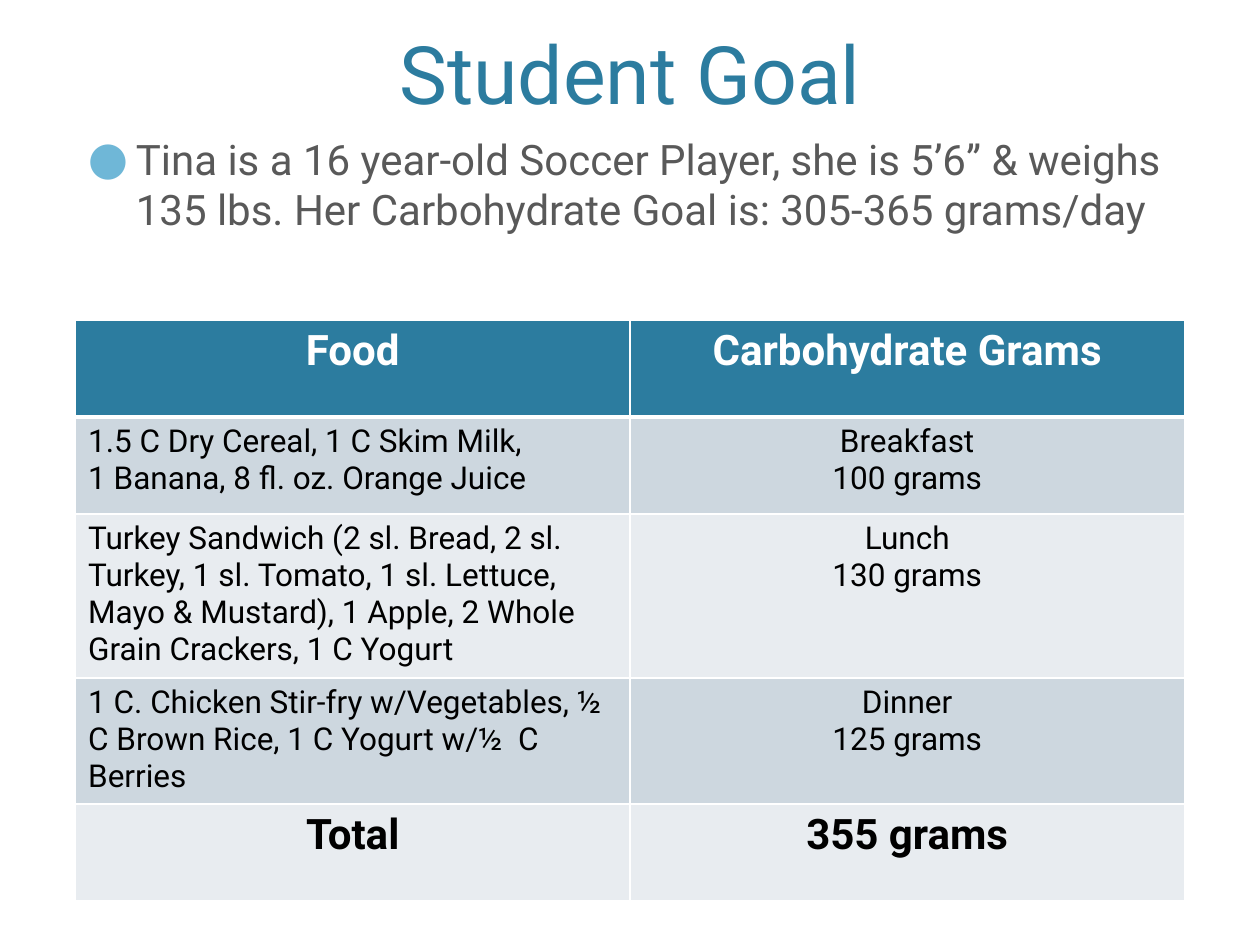
from dataclasses import dataclass

from lxml.etree import SubElement
from pptx import Presentation
from pptx.dml.color import RGBColor
from pptx.enum.text import MSO_ANCHOR, MSO_AUTO_SIZE, PP_ALIGN
from pptx.oxml import parse_xml
from pptx.oxml.ns import nsdecls, qn
from pptx.util import Inches, Pt

SLIDE_W, SLIDE_H = Inches(10), Inches(7.5)
MARGIN = round(SLIDE_W * 0.06)
CONTENT_W = SLIDE_W - 2 * MARGIN
TITLE_TOP, TITLE_H = Inches(0.12), Inches(0.89)
BODY_TOP, BODY_H = TITLE_TOP + TITLE_H, Inches(5.49)
TABLE_TOP, ROW_H = Inches(2.54), Inches(0.77)
FONT = "Roboto"
COLORS = {
    "accent": "2C7C9F",
    "bullet": "6FB7D7",
    "body": "595959",
    "white": "FFFFFF",
    "black": "000000",
    "band_dark": "CDD7DF",
    "band_light": "E8ECF0",
}


@dataclass(frozen=True)
class MealRow:
    food: str
    grams: str
    fill: str
    color: str = "black"
    emphasized: bool = False


MEAL_ROWS = [
    MealRow("Food", "Carbohydrate Grams", "accent", "white", True),
    MealRow("1.5 C Dry Cereal, 1 C Skim Milk,\n1 Banana, 8 fl. oz. Orange Juice",
            "Breakfast\n100 grams", "band_dark"),
    MealRow("Turkey Sandwich (2 sl. Bread, 2 sl. Turkey, 1 sl. Tomato, 1 sl. Lettuce, "
            "Mayo & Mustard), 1 Apple, 2 Whole Grain Crackers, 1 C Yogurt",
            "Lunch\n130 grams", "band_light"),
    MealRow("1 C. Chicken Stir-fry w/Vegetables, ½ C Brown Rice, 1 C Yogurt w/½  C Berries",
            "Dinner\n125 grams", "band_dark"),
    MealRow("Total", "355 grams", "band_light", emphasized=True),
]


def write_text(frame, text: str, *, size: float, color: str,
               bold: bool = False, align=PP_ALIGN.LEFT) -> None:
    frame.text = text
    frame.word_wrap = True
    for paragraph in frame.paragraphs:
        paragraph.alignment = align
        for run in paragraph.runs:
            run.font.name = FONT
            run.font.size = Pt(size)
            run.font.bold = bold
            run.font.color.rgb = RGBColor.from_string(COLORS[color])


def add_bullet(paragraph) -> None:
    properties = paragraph._p.get_or_add_pPr()
    properties.set("marL", str(Inches(0.38)))
    properties.set("indent", str(-Inches(0.38)))
    bullet_color = SubElement(properties, qn("a:buClr"))
    SubElement(bullet_color, qn("a:srgbClr"), val=COLORS["bullet"])
    SubElement(properties, qn("a:buSzPct"), val="110000")
    SubElement(properties, qn("a:buFont"), typeface=FONT)
    SubElement(properties, qn("a:buChar"), char="●")


def set_borders(cell, top: float, bottom: float) -> None:
    """Draw white cell borders; top and bottom are widths in points."""
    widths = {"lnL": 1, "lnR": 1, "lnT": top, "lnB": bottom}
    properties = cell._tc.get_or_add_tcPr()
    for position, (side, width) in enumerate(widths.items()):
        properties.insert(position, parse_xml(
            f'<a:{side} {nsdecls("a")} w="{Pt(width)}"><a:solidFill>'
            f'<a:srgbClr val="{COLORS["white"]}"/></a:solidFill></a:{side}>'))


def add_title(slide) -> None:
    title = slide.shapes.title
    title.left, title.top = MARGIN, TITLE_TOP
    title.width, title.height = CONTENT_W, TITLE_H
    write_text(title.text_frame, "Student Goal", size=46, color="accent", align=PP_ALIGN.CENTER)
    title.text_frame.auto_size = MSO_AUTO_SIZE.NONE
    title.text_frame.vertical_anchor = MSO_ANCHOR.BOTTOM


def add_goal(slide) -> None:
    goal = slide.shapes.add_textbox(MARGIN, BODY_TOP, CONTENT_W, BODY_H).text_frame
    write_text(goal, "Tina is a 16 year-old Soccer Player, she is 5’6” & weighs 135 lbs. "
               "Her Carbohydrate Goal is: 305-365 grams/day", size=24, color="body")
    goal.paragraphs[0].space_before = Pt(20)
    add_bullet(goal.paragraphs[0])


def add_meal_table(slide, rows: list[MealRow]) -> None:
    table = slide.shapes.add_table(len(rows), 2, MARGIN, TABLE_TOP,
                                   CONTENT_W, ROW_H * len(rows)).table
    for index, row in enumerate(rows):
        table.rows[index].height = ROW_H
        for column, text in enumerate((row.food, row.grams)):
            cell = table.cell(index, column)
            centered = row.emphasized or column == 1
            write_text(cell.text_frame, text, size=24 if row.emphasized else 18,
                       color=row.color, bold=row.emphasized,
                       align=PP_ALIGN.CENTER if centered else PP_ALIGN.LEFT)
            cell.fill.solid()
            cell.fill.fore_color.rgb = RGBColor.from_string(COLORS[row.fill])
            set_borders(cell, top=3 if index == 1 else 1, bottom=3 if index == 0 else 1)


def main() -> None:
    deck = Presentation()
    deck.slide_width, deck.slide_height = SLIDE_W, SLIDE_H
    slide = deck.slides.add_slide(deck.slide_layouts.get_by_name("Title Only"))
    add_title(slide)
    add_goal(slide)
    add_meal_table(slide, MEAL_ROWS)
    deck.save("out.pptx")


if __name__ == "__main__":
    main()
